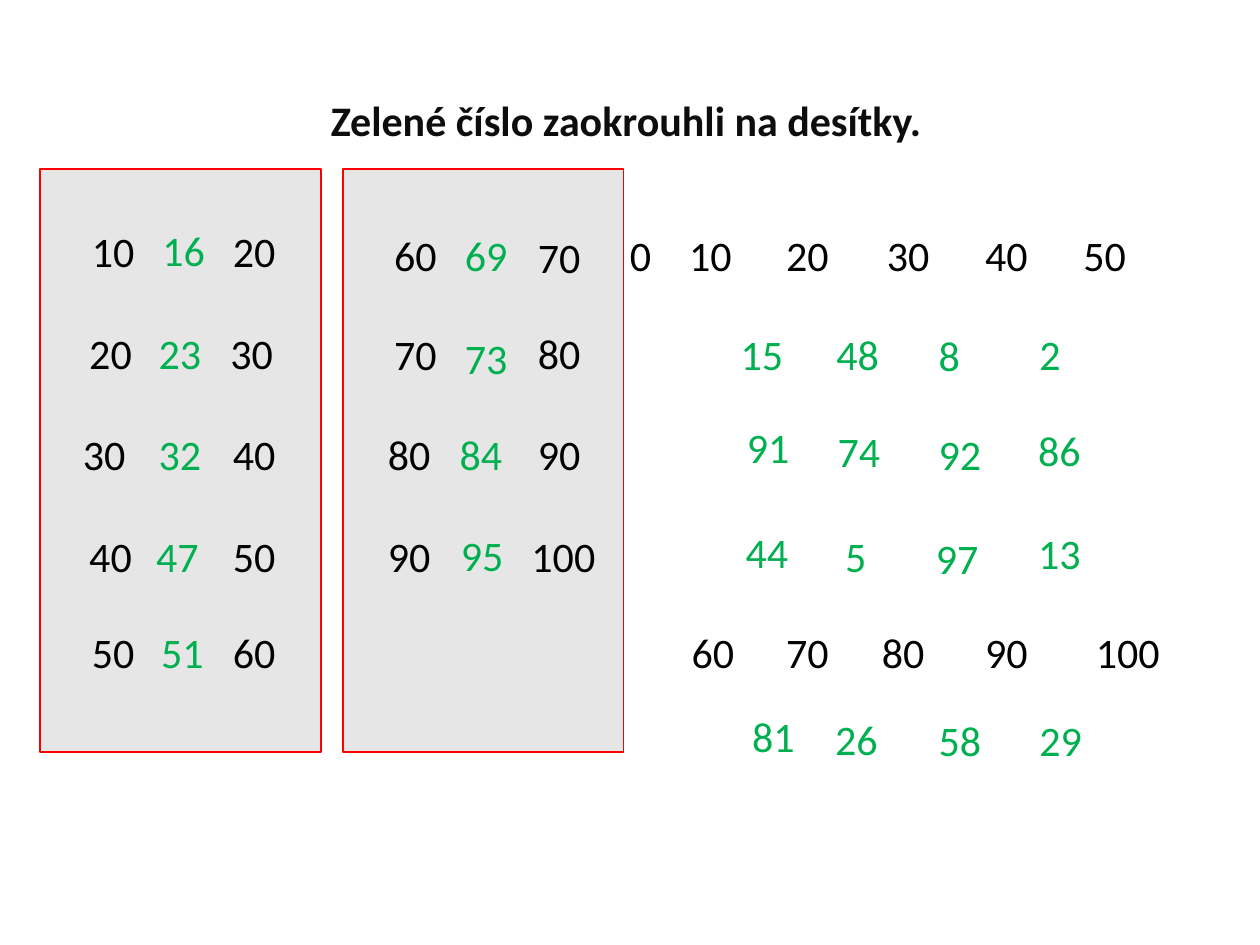
from dataclasses import dataclass

from pptx import Presentation
from pptx import util as u
from pptx.dml.color import RGBColor
from pptx.enum import shapes, text


@dataclass(frozen=True)
class Theme:
    font: str = "Calibri"
    size: u.Length = u.Pt(24)
    title: RGBColor = RGBColor(0x0D, 0x0D, 0x0D)
    tens: RGBColor = RGBColor(0, 0, 0)
    green: RGBColor = RGBColor(0x00, 0xB0, 0x50)
    panel: RGBColor = RGBColor(0xE7, 0xE6, 0xE6)
    border: RGBColor = RGBColor(0xFF, 0, 0)


theme = Theme()
NUMBER_WIDTHS = {1: 0.38, 2: 0.62, 3: 0.76}  # by count of digits

presentation = Presentation()
presentation.slide_width = u.Inches(10)
presentation.slide_height = u.Inches(7.5)
slide = presentation.slides.add_slide(presentation.slide_layouts[6])


def add_text(wording, left, top, width, height, color, bold=False):
    box = slide.shapes.add_textbox(
        u.Inches(left), u.Inches(top), u.Inches(width), u.Inches(height))
    box.text_frame.word_wrap = True
    paragraph = box.text_frame.paragraphs[0]
    run = paragraph.add_run()
    run.text = wording
    run.font.name = theme.font
    run.font.size = theme.size
    run.font.bold = bold
    run.font.color.rgb = color
    return box


def add_number(number, left, top, color):
    wording = str(number)
    box = add_text(wording, left, top, NUMBER_WIDTHS[len(wording)], 0.5, color)
    box.text_frame.auto_size = text.MSO_AUTO_SIZE.SHAPE_TO_FIT_TEXT


# Panels
for left in (2.72, 0.32):
    panel = slide.shapes.add_shape(
        shapes.MSO_SHAPE.RECTANGLE,
        u.Inches(left), u.Inches(1.34), u.Inches(2.23), u.Inches(4.63))
    panel.shadow.inherit = False
    panel.fill.solid()
    panel.fill.fore_color.rgb = theme.panel
    panel.line.color.rgb = theme.border
    panel.line.width = u.Pt(1)

# Title
title = add_text("Zelené číslo zaokrouhli na desítky.",
                 1.01, 0.35, 7.92, 1.25, theme.title, bold=True)
title.text_frame.vertical_anchor = text.MSO_ANCHOR.MIDDLE
title.text_frame.paragraphs[0].alignment = text.PP_ALIGN.CENTER
title.text_frame.paragraphs[0].line_spacing = 0.9

# Panel rows: green number, then (left, top) of lower ten, green number, upper ten
panel_rows = [
    (16, (0.63, 1.74), (1.19, 1.73), (1.75, 1.74)),
    (23, (0.61, 2.55), (1.16, 2.55), (1.73, 2.55)),
    (32, (0.56, 3.35), (1.16, 3.35), (1.75, 3.35)),
    (47, (0.61, 4.16), (1.14, 4.16), (1.75, 4.16)),
    (51, (0.63, 4.92), (1.18, 4.92), (1.75, 4.92)),
    (69, (3.03, 1.77), (3.59, 1.77), (4.17, 1.79)),
    (73, (3.03, 2.56), (3.59, 2.59), (4.17, 2.55)),
    (84, (2.98, 3.35), (3.55, 3.35), (4.17, 3.35)),
    (95, (2.98, 4.16), (3.56, 4.15), (4.12, 4.16)),
]
for number, lower_place, green_place, upper_place in panel_rows:
    lower_ten = number // 10 * 10
    add_number(lower_ten, *lower_place, theme.tens)
    add_number(number, *green_place, theme.green)
    add_number(lower_ten + 10, *upper_place, theme.tens)

# Tens to choose from: first ten, top, left edges
tens_rows = [
    (0, 1.77, (4.9, 5.37, 6.14, 6.94, 7.72, 8.5)),
    (60, 4.92, (5.39, 6.14, 6.9, 7.72, 8.6)),
]
for first_ten, top, lefts in tens_rows:
    for step, left in enumerate(lefts):
        add_number(first_ten + 10 * step, left, top, theme.tens)

# Green numbers to round: number, left, top
green_numbers = [
    (15, 5.78, 2.56), (48, 6.54, 2.56), (8, 7.35, 2.57), (2, 8.15, 2.56),
    (91, 5.83, 3.3), (74, 6.55, 3.33), (92, 7.35, 3.35), (86, 8.14, 3.32),
    (44, 5.82, 4.13), (5, 6.61, 4.16), (97, 7.33, 4.18), (13, 8.14, 4.14),
    (81, 5.87, 5.59), (26, 6.53, 5.61), (58, 7.35, 5.62), (29, 8.15, 5.62),
]
for number, left, top in green_numbers:
    add_number(number, left, top, theme.green)

presentation.save("out.pptx")
